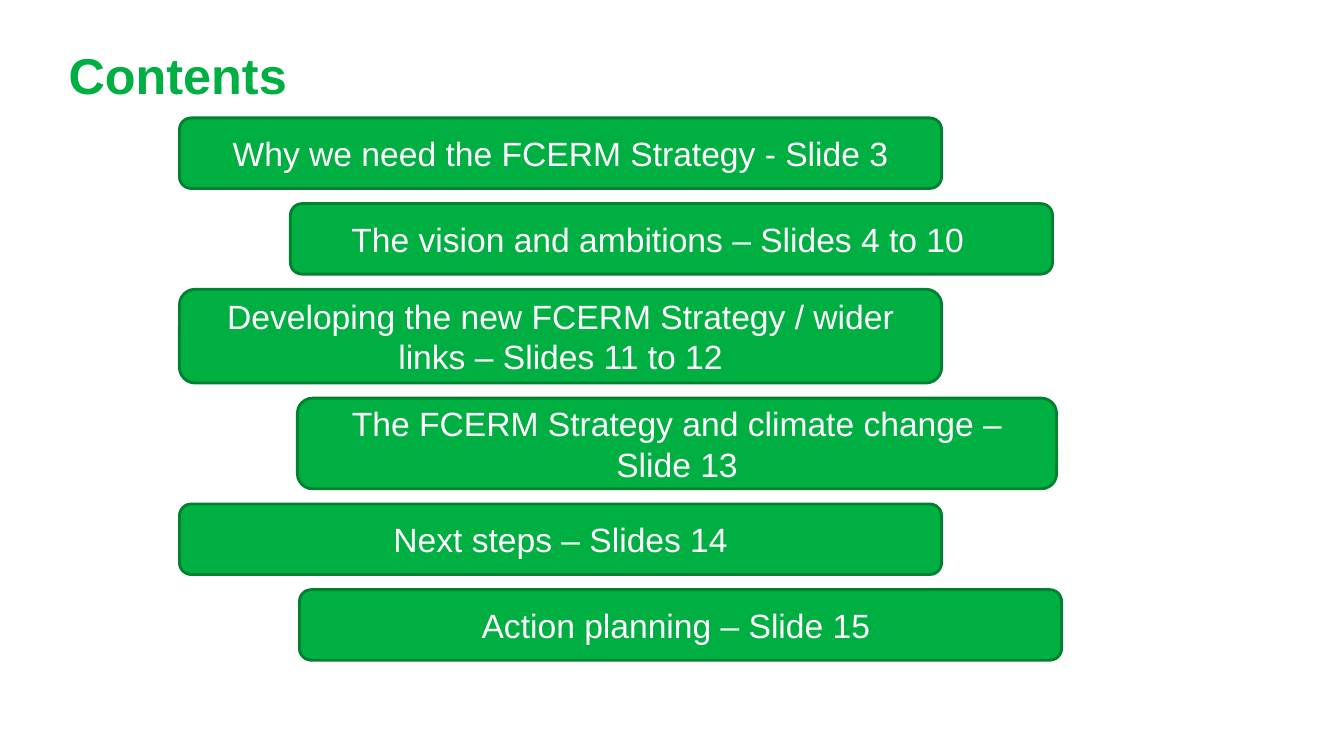
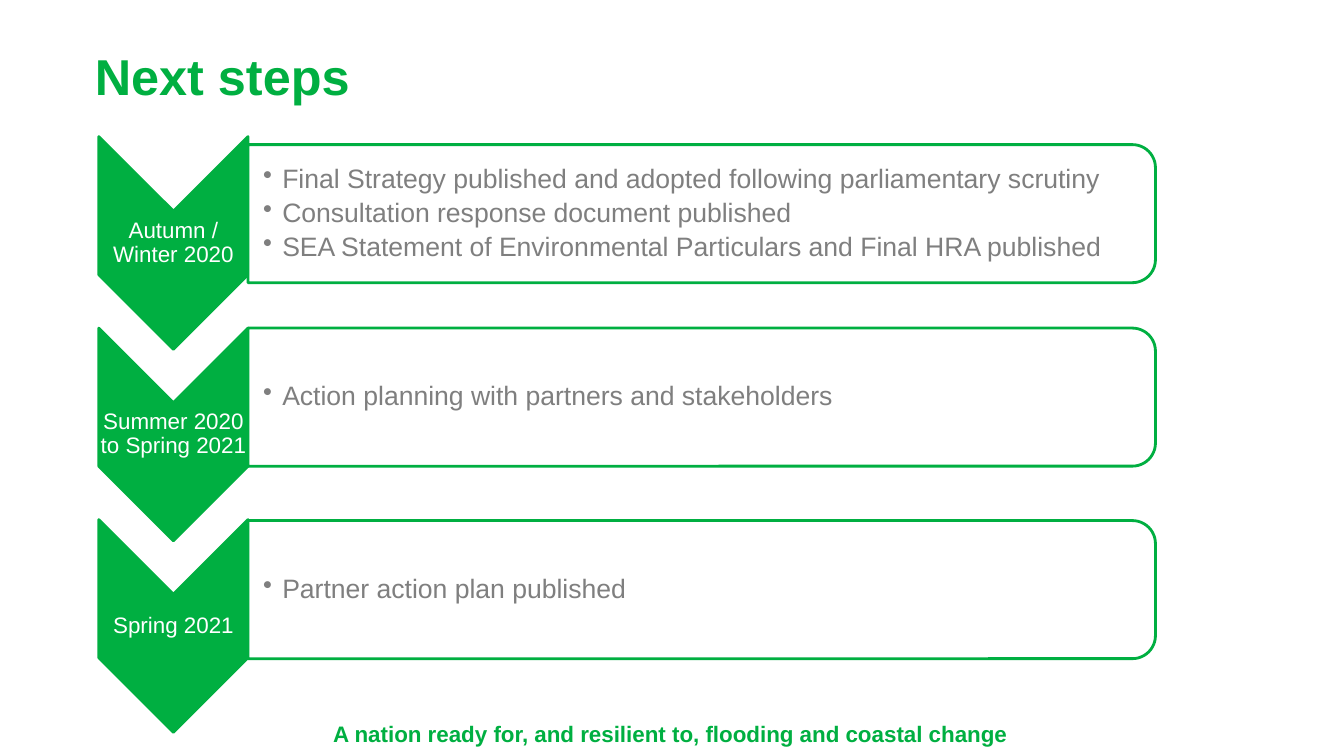
"""Build the contents and next steps slides of the strategy presentation."""
from lxml import etree
from pptx import Presentation
from pptx.dml.color import RGBColor
from pptx.enum.shapes import MSO_SHAPE
from pptx.enum.text import MSO_ANCHOR, PP_ALIGN
from pptx.oxml.ns import qn
from pptx.util import Inches, Pt

GREEN = RGBColor(0x00, 0xAF, 0x41)
DARK_GREEN = RGBColor(0x00, 0x81, 0x30)
GREY = RGBColor(0x7F, 0x7F, 0x7F)
WHITE = RGBColor(0xFF, 0xFF, 0xFF)
FONT = "Arial"
LEFT, CENTER = PP_ALIGN.LEFT, PP_ALIGN.CENTER
TOP, MIDDLE = MSO_ANCHOR.TOP, MSO_ANCHOR.MIDDLE
ROUNDED = MSO_SHAPE.ROUNDED_RECTANGLE
CHEVRON = MSO_SHAPE.CHEVRON
TWO_ROUND_CORNERS = MSO_SHAPE.ROUND_2_SAME_RECTANGLE

# text, left, width, height, right inset
CONTENTS = [
    ("Why we need the FCERM Strategy - Slide 3", 1.78, 7.56, 0.7, 0.1),
    ("The vision and ambitions – Slides 4 to 10", 2.88, 7.56, 0.7, 0.37),
    ("Developing the new FCERM Strategy / wider links – Slides 11 to 12", 1.78, 7.56, 0.93, 0.1),
    ("The FCERM Strategy and climate change – Slide 13", 2.95, 7.53, 0.9, 0.1),
    ("Next steps – Slides 14", 1.78, 7.56, 0.7, 0.1),
    ("Action planning – Slide 15", 2.97, 7.56, 0.7, 0.19),
]
CONTENTS_TOP, CONTENTS_GAP = 1.17, 0.15

# period, vertical centre of the panel, actions
STEPS = [
    ("Autumn / Winter 2020", 2.12, [
        "Final Strategy published and adopted following parliamentary scrutiny",
        "Consultation response document published",
        "SEA Statement of Environmental Particulars and Final HRA published",
    ]),
    ("Summer 2020 to Spring 2021", 3.94, ["Action planning with partners and stakeholders"]),
    ("Spring 2021", 5.85, ["Partner action plan published"]),
]
STEP_LEFT, FIRST_STEP_CENTER, STEP_PITCH = 0.98, 2.41, 1.9
CHEVRON_WIDTH, CHEVRON_HEIGHT = 1.48, 2.11
PANEL_WIDTH, PANEL_HEIGHT = 9, 1.37
ACTIONS_WIDTH, ACTIONS_HEIGHT, LABEL_HEIGHT = 8.93, 1.24, 0.63
THIN = (0.01, 0.01, 0.01, 0.01)
TAGLINE = "A nation ready for, and resilient to, flooding and coastal change"


def write(box, lines, size, color, bold=False, align=LEFT, anchor=TOP,
          insets=(0.1, 0.05, 0.1, 0.05), spacing=1.0, after=0, bullet_indent=0):
    """Fill a shape or text box with one paragraph per line."""
    frame = box.text_frame
    frame.word_wrap = True
    frame.vertical_anchor = anchor
    (frame.margin_left, frame.margin_top,
     frame.margin_right, frame.margin_bottom) = map(Inches, insets)
    for index, line in enumerate(lines):
        para = frame.add_paragraph() if index else frame.paragraphs[0]
        if bullet_indent:
            properties = para._p.get_or_add_pPr()
            properties.set("marL", str(Inches(bullet_indent)))
            properties.set("indent", str(-Inches(bullet_indent)))
            etree.SubElement(properties, qn("a:buChar")).set("char", "•")
        para.alignment = align
        para.line_spacing = spacing
        para.space_after = Pt(after)
        span = para.add_run()
        span.text = line
        span.font.name = FONT
        span.font.size = Pt(size)
        span.font.bold = bold
        span.font.color.rgb = color


def add_text(page, lines, left, top, width, height, **style):
    """Add a text box."""
    box = page.shapes.add_textbox(*map(Inches, (left, top, width, height)))
    write(box, lines, **style)


def add_title(page, text, left, top):
    """Add a slide title."""
    add_text(page, [text], left, top, 8, 0.52, size=36, color=GREEN, bold=True,
             insets=(0, 0, 0, 0), spacing=0.9)


def add_box(page, kind, left, top, width, height, fill, line):
    """Add a filled and outlined preset shape."""
    box = page.shapes.add_shape(kind, *map(Inches, (left, top, width, height)))
    box.shadow.inherit = False
    box.fill.solid()
    box.fill.fore_color.rgb = fill
    box.line.color.rgb = line
    box.line.width = Pt(2)
    return box


def add_turned_box(page, kind, left, middle, width, height, fill):
    """Add a shape turned a quarter, given its size as seen on the slide."""
    box = add_box(page, kind, left + (width - height) / 2, middle - width / 2,
                  height, width, fill, GREEN)
    box.rotation = 90
    return box


def build_contents(page):
    """Draw the staggered list of sections."""
    add_title(page, "Contents", 0.68, 0.51)
    top = CONTENTS_TOP
    for text, left, width, height, right_inset in CONTENTS:
        box = add_box(page, ROUNDED, left, top, width, height, GREEN, DARK_GREEN)
        write(box, [text], size=24, color=WHITE, align=CENTER, anchor=MIDDLE,
              insets=(0.1, 0.05, right_inset, 0.05))
        top += height + CONTENTS_GAP


def build_next_steps(page):
    """Draw one chevron and one panel of actions for each period."""
    add_title(page, "Next steps", 0.94, 0.52)
    panel_left = STEP_LEFT + CHEVRON_WIDTH
    for index, (period, panel_center, actions) in enumerate(STEPS):
        center = FIRST_STEP_CENTER + index * STEP_PITCH
        add_turned_box(page, CHEVRON, STEP_LEFT, center, CHEVRON_WIDTH, CHEVRON_HEIGHT, GREEN)
        add_text(page, [period], STEP_LEFT, center - LABEL_HEIGHT / 2, CHEVRON_WIDTH,
                 LABEL_HEIGHT, size=16, color=WHITE, align=CENTER, anchor=MIDDLE,
                 insets=THIN, spacing=0.9)
        panel = add_turned_box(page, TWO_ROUND_CORNERS, panel_left, panel_center,
                               PANEL_WIDTH, PANEL_HEIGHT, WHITE)
        color = panel._element.spPr.find(qn("a:solidFill"))[0]
        etree.SubElement(color, qn("a:alpha")).set("val", "90000")
        add_text(page, actions, panel_left, panel_center - ACTIONS_HEIGHT / 2, ACTIONS_WIDTH,
                 ACTIONS_HEIGHT, size=19, color=GREY, anchor=MIDDLE,
                 insets=(0.15, 0.01, 0.01, 0.01), spacing=0.9, after=3.9, bullet_indent=0.19)
    add_text(page, [TAGLINE], 3.16, 7.06, 6.98, 0.43, size=16, color=GREEN, bold=True,
             align=CENTER, anchor=MIDDLE)


def main():
    """Build and save the deck."""
    deck = Presentation()
    deck.slide_width, deck.slide_height = Inches(13.33), Inches(7.5)
    blank = deck.slide_layouts[6]
    for build in (build_contents, build_next_steps):
        build(deck.slides.add_slide(blank))
    deck.save("out.pptx")


if __name__ == "__main__":
    main()
